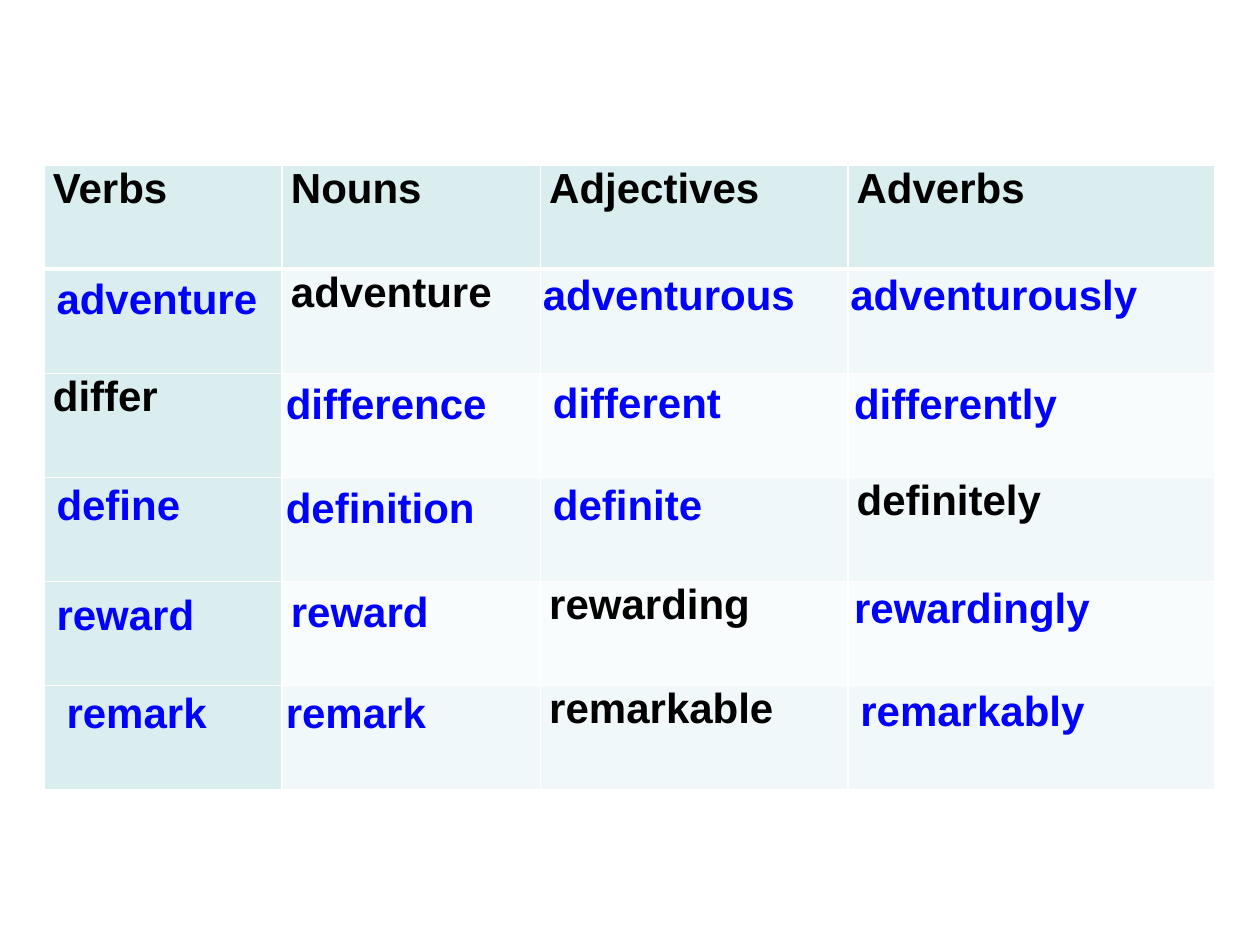
"""Build a word-formation slide: a table of word families with the answers laid over it."""
import pptx
import pptx.dml.color
import pptx.enum.text
import pptx.oxml
import pptx.oxml.ns
import pptx.util

Inches = pptx.util.Inches
BLACK, BLUE, WHITE = "000000", "0000FF", "FFFFFF"
HEADING, BAND_ODD, BAND_EVEN = "DAEDEF", "F1F8F9", "F8FCFC"


def rgb(value):
    return pptx.dml.color.RGBColor.from_string(value)


def write_word(frame, word, color):
    paragraph = frame.paragraphs[0]
    paragraph.alignment = pptx.enum.text.PP_ALIGN.JUSTIFY
    run = paragraph.add_run()
    run.text = word
    word_format = {"name": "Arial", "size": pptx.util.Pt(24), "bold": True}
    for attribute, value in word_format.items():
        setattr(run.font, attribute, value)
    run.font.color.rgb = rgb(color)


deck = pptx.Presentation()
deck.slide_width, deck.slide_height = Inches(10), Inches(7.5)
slide = deck.slides.add_slide(deck.slide_layouts[6])

word_families = [
    ["Verbs", "Nouns", "Adjectives", "Adverbs"],
    ["", "adventure", "", ""],
    ["differ", "", "", ""],
    ["", "", "", "definitely"],
    ["", "", "rewarding", ""],
    ["", "", "remarkable", ""],
]
column_widths = [1.89, 2.05, 2.44, 2.91]
cell_margins = {"margin_left": 0.07, "margin_top": 0, "margin_right": 0.07, "margin_bottom": 0}

families = slide.shapes.add_table(
    len(word_families), len(column_widths),
    Inches(0.35), Inches(1.31), Inches(sum(column_widths)), Inches(4.96),
).table
for column, width in zip(families.columns, column_widths):
    column.width = Inches(width)

for row, words in enumerate(word_families):
    for col, word in enumerate(words):
        cell = families.cell(row, col)
        for attribute, value in cell_margins.items():
            setattr(cell, attribute, Inches(value))
        cell.fill.solid()
        band = BAND_ODD if row % 2 else BAND_EVEN
        cell.fill.fore_color.rgb = rgb(HEADING if row == 0 or col == 0 else band)
        if word:
            write_word(cell.text_frame, word, BLACK)
        border_points = {"L": 1, "R": 1, "T": 3 if row == 1 else 1, "B": 3 if row == 0 else 1}
        for position, (side, points) in enumerate(border_points.items()):
            border = pptx.oxml.parse_xml(
                f'<a:ln{side} {pptx.oxml.ns.nsdecls("a")} w="{pptx.util.Pt(points)}">'
                f'<a:solidFill><a:srgbClr val="{WHITE}"/></a:solidFill></a:ln{side}>'
            )
            cell._tc.get_or_add_tcPr().insert(position, border)

answers = [
    ("adventure", 0.35, 2.11, 1.81),
    ("adventurous", 4.21, 2.08, 2.22),
    ("adventurously", 6.65, 2.08, 2.5),
    ("difference", 2.17, 2.95, 1.81),
    ("different", 4.29, 2.94, 1.55),
    ("differently", 6.68, 2.95, 1.83),
    ("define", 0.35, 3.75, 1.19),
    ("definition", 2.17, 3.77, 1.71),
    ("definite", 4.29, 3.75, 1.4),
    ("reward", 0.35, 4.62, 1.31),
    ("reward", 2.21, 4.6, 1.31),
    ("rewardingly", 6.68, 4.57, 2.09),
    ("remark", 0.43, 5.4, 1.33),
    ("remark", 2.17, 5.4, 1.33),
    ("remarkably", 6.73, 5.38, 2),
]
answer_format = {
    "word_wrap": False,
    "auto_size": pptx.enum.text.MSO_AUTO_SIZE.SHAPE_TO_FIT_TEXT,
}
for word, left, top, width in answers:
    answer = slide.shapes.add_textbox(Inches(left), Inches(top), Inches(width), Inches(0.5))
    for attribute, value in answer_format.items():
        setattr(answer.text_frame, attribute, value)
    write_word(answer.text_frame, word, BLUE)

deck.save("out.pptx")
